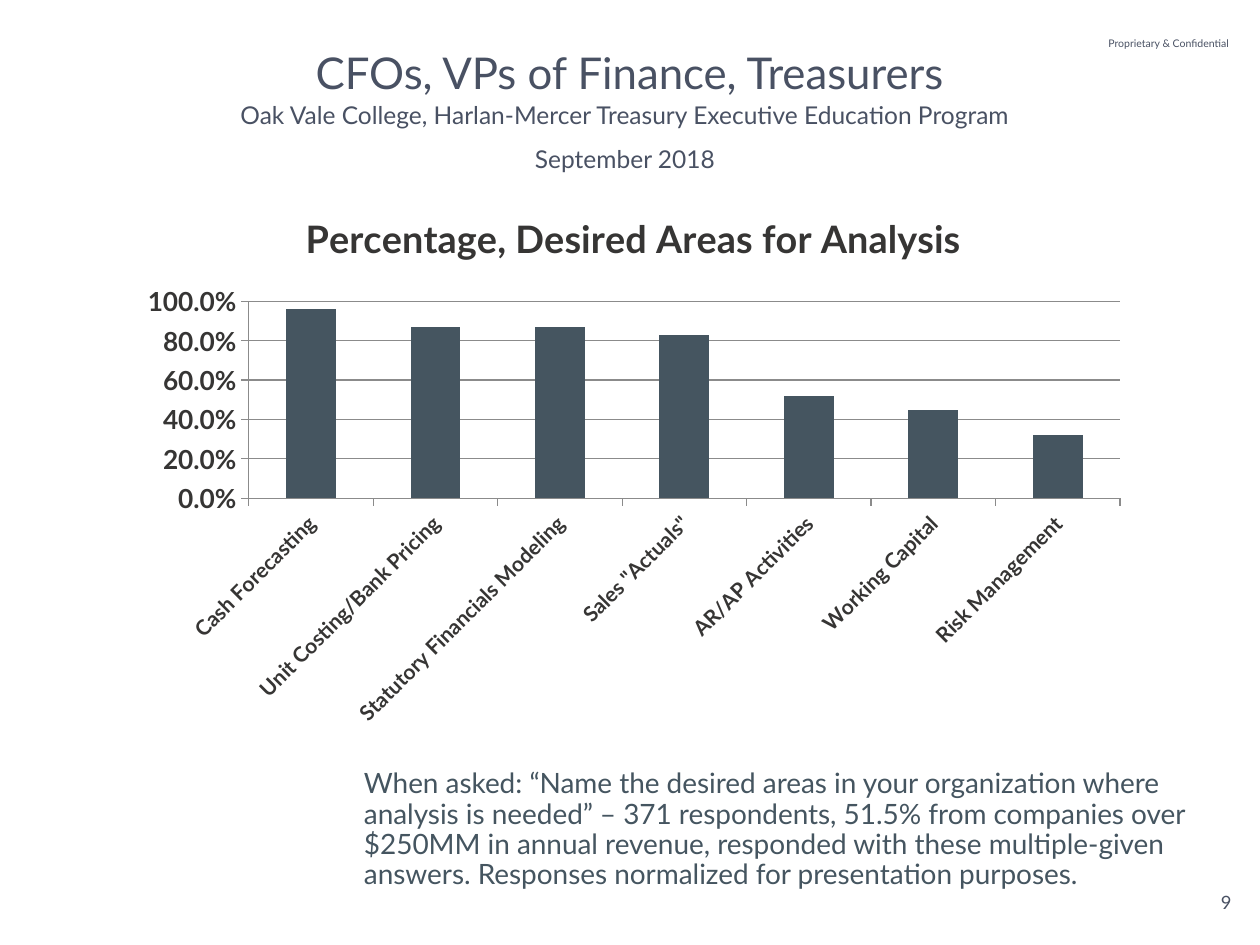
from lxml import etree
from pptx import Presentation
from pptx.chart.data import CategoryChartData
from pptx.dml.color import RGBColor
from pptx.enum.chart import XL_CHART_TYPE, XL_TICK_MARK
from pptx.enum.text import MSO_ANCHOR, PP_ALIGN
from pptx.oxml.ns import qn
from pptx.util import Pt

COLORS = {"text": "495163", "slate": "455560", "chart": "363534", "grid": "8B8B8B"}
FONT = "Lato"


def style_font(font, size, color, bold=False):
    font.name, font.size, font.bold = FONT, Pt(size), bold
    font.color.rgb = RGBColor.from_string(COLORS[color])


def add_text(box, lines, size, color="text", align=PP_ALIGN.LEFT,
             spacing=1.0, before=0, anchor=MSO_ANCHOR.TOP):
    tf = s.shapes.add_textbox(*[Pt(v) for v in box]).text_frame
    tf.word_wrap = True
    tf.vertical_anchor = anchor
    for i, line in enumerate(lines):
        p = tf.paragraphs[0] if i == 0 else tf.add_paragraph()
        p.alignment, p.line_spacing, p.space_before = align, spacing, Pt(before)
        r = p.add_run()
        r.text = line
        style_font(r.font, size, color)
    return tf


prs = Presentation()
prs.slide_width, prs.slide_height = Pt(720), Pt(540)
s = prs.slides.add_slide(prs.slide_layouts[6])

# Confidentiality mark
add_text((465.8, 10.1, 243.4, 28.8), ["Proprietary & Confidential"], 6,
         align=PP_ALIGN.RIGHT, anchor=MSO_ANCHOR.MIDDLE)

# Survey note
note = ("When asked: “Name the desired areas in your organization where analysis is "
        "needed” – 371 respondents, 51.5% from companies over $250MM in annual revenue, "
        "responded with these multiple-given answers. Responses normalized for "
        "presentation purposes.")
add_text((200.9, 436.3, 495.4, 100), [note], 16, "slate", spacing=0.9, before=10)

# Column chart
areas = {
    "Cash Forecasting": 0.96,
    "Unit Costing/Bank Pricing": 0.87,
    "Statutory Financials Modeling": 0.87,
    'Sales "Actuals"': 0.83,
    "AR/AP Activities": 0.52,
    "Working Capital": 0.45,
    "Risk Management": 0.32,
}
data = CategoryChartData(number_format="0.0%")
data.categories = list(areas)
data.add_series("Series 1", list(areas.values()))
chart = s.shapes.add_chart(XL_CHART_TYPE.COLUMN_CLUSTERED, Pt(72.7), Pt(106.6),
                           Pt(578.9), Pt(312.5), data).chart
style_font(chart.font, 18, "chart")
chart.has_legend = False
chart.has_title = True
r = chart.chart_title.text_frame.paragraphs[0].add_run()
r.text = "Percentage, Desired Areas for Analysis"
style_font(r.font, 21.6, "chart", True)

plot = chart.plots[0]
plot.gap_width = 150
plot.vary_by_categories = False
fill = plot.series[0].format.fill
fill.solid()
fill.fore_color.rgb = RGBColor.from_string(COLORS["slate"])

# Axes
cat_axis, val_axis = chart.category_axis, chart.value_axis
for axis, size in ((cat_axis, 12), (val_axis, 15)):
    style_font(axis.tick_labels.font, size, "chart", True)
    axis.major_tick_mark = XL_TICK_MARK.OUTSIDE
    axis.minor_tick_mark = XL_TICK_MARK.NONE
val_axis.minimum_scale, val_axis.maximum_scale, val_axis.major_unit = 0, 1, 0.2
val_axis.tick_labels.number_format = "0.0%"
val_axis.tick_labels.number_format_is_linked = False
val_axis.has_major_gridlines = True
for line in (cat_axis.format.line, val_axis.format.line,
             val_axis.major_gridlines.format.line):
    line.color.rgb = RGBColor.from_string(COLORS["grid"])
    line.width = Pt(0.75)

# Slanted category labels and fixed plot area
cat_axis._element.find(qn("c:txPr")).find(qn("a:bodyPr")).set("rot", "-2700000")
area = chart._chartSpace.chart.plotArea
for old in area.findall(qn("c:layout")):
    area.remove(old)
layout = etree.Element(qn("c:layout"))
area.insert(0, layout)
manual = etree.SubElement(layout, qn("c:manualLayout"))
for tag, val in (("layoutTarget", "inner"), ("xMode", "edge"), ("yMode", "edge"),
                 ("x", "0.12"), ("y", "0.21"), ("w", "0.86"), ("h", "0.36")):
    etree.SubElement(manual, qn("c:" + tag)).set("val", val)

# Title and subtitle
add_text((25.2, 25.9, 668.9, 63.4), ["CFOs, VPs of Finance, Treasurers"], 25,
         align=PP_ALIGN.CENTER, spacing=0.9)
add_text((107.3, 55.4, 499.7, 33.8),
         ["Oak Vale College, Harlan-Mercer Treasury Executive Education Program",
          "September 2018"], 14, align=PP_ALIGN.CENTER, spacing=0.9, before=10)

# Page number
tf = add_text((694.1, 509, 13, 13), ["9"], 10.5, align=PP_ALIGN.CENTER)
tf.word_wrap = False
tf.margin_left = tf.margin_right = tf.margin_top = tf.margin_bottom = 0

prs.save("out.pptx")
